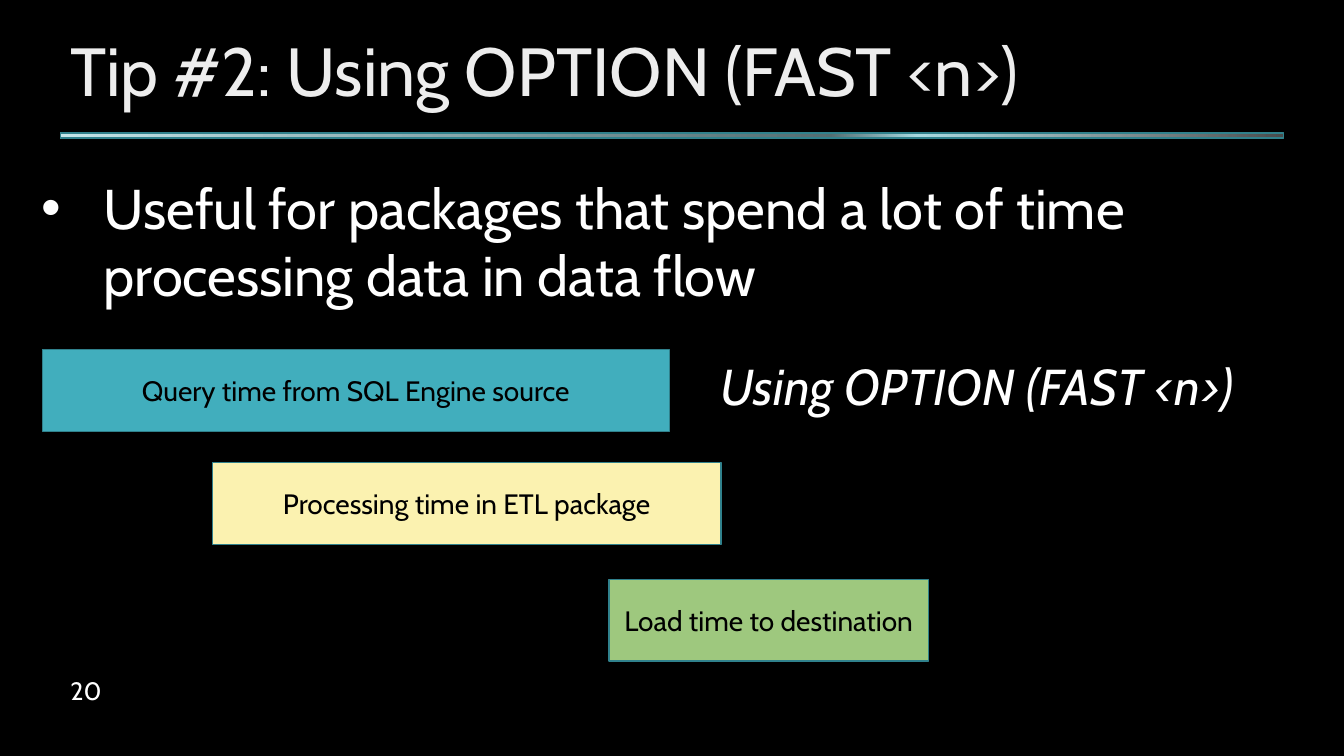
from lxml import etree
from pptx import Presentation
from pptx.dml.color import RGBColor
from pptx.enum.shapes import MSO_SHAPE
from pptx.enum.text import MSO_ANCHOR, PP_ALIGN
from pptx.oxml.ns import qn
from pptx.util import Inches, Pt

RECT = MSO_SHAPE.RECTANGLE
TOP, MIDDLE = MSO_ANCHOR.TOP, MSO_ANCHOR.MIDDLE
LEFT, CENTER = PP_ALIGN.LEFT, PP_ALIGN.CENTER
FONT = "Cabin"
BLACK, WHITE, TITLE, OUTLINE = "000000", "FFFFFF", "EDEDED", "30818C"
RULE_STOPS = [(0, "F5FBFC", 30), (30, "A9DBE2", 100),
              (37, "A9DBE2", 50), (100, "C6E7EB", 100)]
BAR_HEIGHT = 0.81
BARS = [
    ("Query time from SQL Engine source", 0.42, 3.47, 6.22, "41AEBD"),
    ("Processing time in ETL package", 2.11, 4.59, 5.04, "FBF2B0"),
    ("Load time to destination", 6.04, 5.75, 3.17, "9EC87E"),
]


def rgb(value):
    """Return the colour for a hex string."""
    return RGBColor.from_string(value)


def write(sp, text, size=20, color=WHITE, italic=False, align=LEFT,
          anchor=TOP, wrap=True, spacing=None):
    """Put one formatted paragraph into a shape and return it."""
    tf = sp.text_frame
    tf.word_wrap = wrap
    tf.vertical_anchor = anchor
    p = tf.paragraphs[0]
    p.alignment = align
    if spacing:
        p.line_spacing = spacing
    r = p.add_run()
    r.text = text
    r.font.name = FONT
    r.font.size = Pt(size)
    r.font.italic = italic
    r.font.color.rgb = rgb(color)
    return p


def add_text(s, text, x, y, w, h, **style):
    """Add a text box and return its paragraph."""
    sp = s.shapes.add_textbox(Inches(x), Inches(y), Inches(w), Inches(h))
    return write(sp, text, **style)


def add_bullet(p, indent):
    """Give a paragraph a hanging round bullet."""
    pPr = p._p.get_or_add_pPr()
    pPr.set("marL", str(Inches(indent)))
    pPr.set("indent", str(-Inches(indent)))
    etree.SubElement(pPr, qn("a:buFont"), typeface="Arial")
    etree.SubElement(pPr, qn("a:buChar"), char="•")


def add_rect(s, x, y, w, h, fill):
    """Add an outlined rectangle with a solid fill."""
    sp = s.shapes.add_shape(RECT, Inches(x), Inches(y), Inches(w), Inches(h))
    sp.shadow.inherit = False
    sp.fill.solid()
    sp.fill.fore_color.rgb = rgb(fill)
    sp.line.color.rgb = rgb(OUTLINE)
    sp.line.width = Pt(1)
    return sp


def set_gradient(sp, stops, angle):
    """Replace a solid fill by a linear gradient with transparency."""
    solid = sp._element.spPr.find(qn("a:solidFill"))
    grad = etree.Element(qn("a:gradFill"), rotWithShape="1")
    gs_list = etree.SubElement(grad, qn("a:gsLst"))
    for position, color, opacity in stops:
        gs = etree.SubElement(gs_list, qn("a:gs"), pos=str(position * 1000))
        clr = etree.SubElement(gs, qn("a:srgbClr"), val=color)
        etree.SubElement(clr, qn("a:alpha"), val=str(opacity * 1000))
    etree.SubElement(grad, qn("a:lin"), ang=str(angle * 60000), scaled="0")
    solid.getparent().replace(solid, grad)


def main():
    """Build the slide and save it."""
    prs = Presentation()
    prs.slide_width, prs.slide_height = Inches(13.33), Inches(7.5)
    s = prs.slides.add_slide(prs.slide_layouts[6])
    s.background.fill.solid()
    s.background.fill.fore_color.rgb = rgb(BLACK)

    add_text(s, "20", 0.6, 6.65, 0.51, 0.4, size=18, wrap=False)
    rule = add_rect(s, 0.6, 1.32, 12.13, 0.05, WHITE)
    set_gradient(rule, RULE_STOPS, 180)
    add_text(s, "Tip #2: Using OPTION (FAST <n>)", 0.6, 0.29, 12.35, 0.9,
             size=48.6, color=TITLE, anchor=MIDDLE, spacing=0.9)
    p = add_text(s, "Useful for packages that spend a lot of time processing "
                 "data in data flow", 0.31, 1.67, 11.76, 1.45, size=40)
    add_bullet(p, 0.62)
    for text, x, y, w, fill in BARS:
        bar = add_rect(s, x, y, w, BAR_HEIGHT, fill)
        write(bar, text, color=BLACK, align=CENTER, anchor=MIDDLE)
    add_text(s, "Using OPTION (FAST <n>)", 7.05, 3.47, 5.5, 0.71,
             size=36, italic=True, wrap=False)
    prs.save("out.pptx")


if __name__ == "__main__":
    main()
